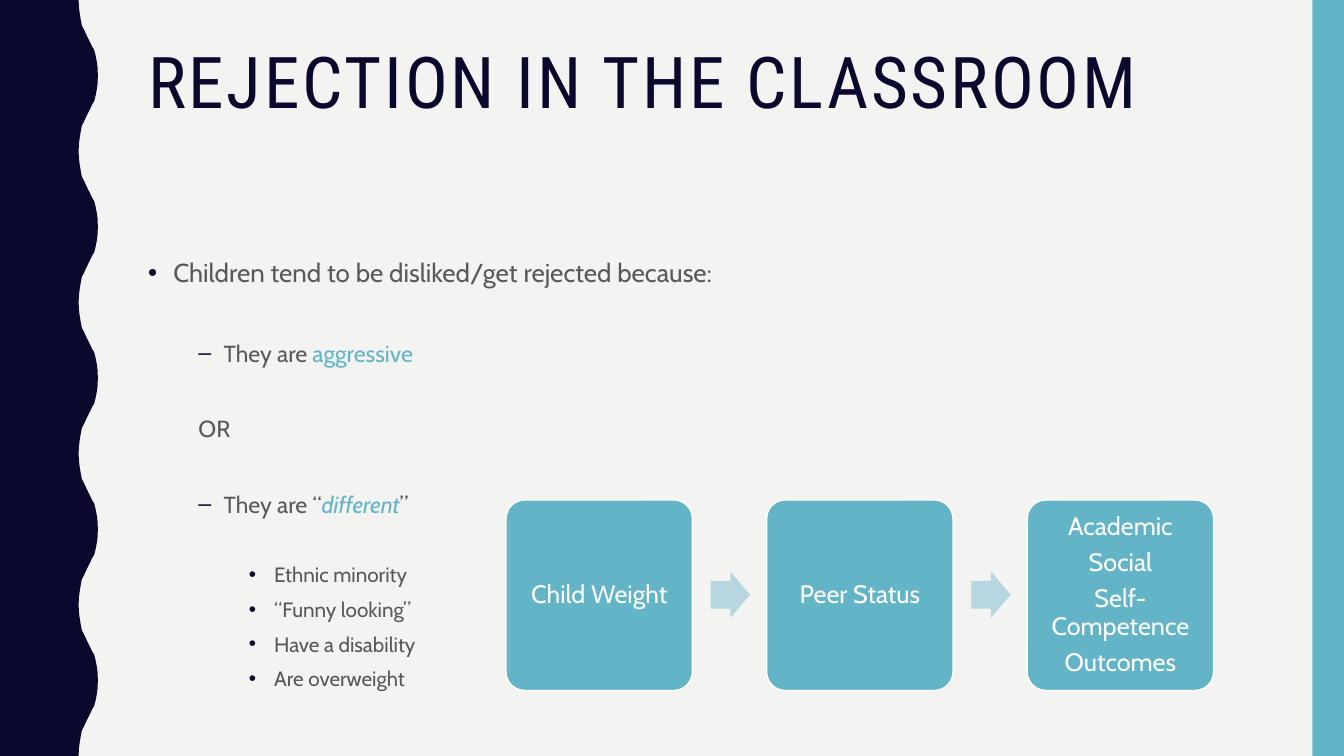
from dataclasses import dataclass
from typing import Optional

from lxml.etree import SubElement
from pptx import Presentation
from pptx.dml.color import RGBColor
from pptx.enum.shapes import MSO_SHAPE as Preset
from pptx.enum.text import MSO_ANCHOR as Anchor, PP_ALIGN as Align
from pptx.oxml.ns import qn
from pptx.util import Inches, Pt

WIDTH, HEIGHT = Inches(13.333), Inches(7.5)
COLOURS = {"paper": "F3F3F2", "navy": "0B082E", "teal": "62B4C6",
           "pale": "B7D6DF", "grey": "595959", "white": "FFFFFF"}
HEADING_FONT, BODY_FONT = "Roboto Condensed", "Cabin"

# Half a wave, from trough to crest: shares of the wave's depth and length
WAVE_DEPTHS = (0, 0.02, 0.06, 0.11, 0.17, 0.26, 0.37, 0.48,
               0.6, 0.71, 0.81, 0.89, 0.95, 0.99, 1)
WAVE_STEPS = (0, 0.05, 0.09, 0.13, 0.17, 0.19, 0.22, 0.25,
              0.28, 0.31, 0.33, 0.37, 0.41, 0.45, 0.5)
WAVES = 5

# Flow of cards, in percent of the slide
FLOW_LEFT, FLOW_STEP = 37.65, 19.39
ARROW_OFFSET = 15.23


@dataclass(frozen=True)
class Span:
    words: str
    accent: bool = False
    italic: bool = False


@dataclass(frozen=True)
class Point:
    spans: tuple[Span, ...]
    size: float
    margin: float
    before: float = 7
    bullet: Optional[str] = None


@dataclass(frozen=True)
class Frame:
    """Place and size in percent of the slide."""
    left: float
    top: float
    width: float
    height: float

    def lengths(self) -> tuple[int, int, int, int]:
        return (across(self.left), down(self.top),
                across(self.width), down(self.height))


POINTS = (
    Point((Span("Children tend to be disliked/get rejected because:"),),
          18.5, 0.25, bullet="•"),
    Point((Span("They are "), Span("aggressive", True)), 16.6, 0.75, 36.3, "–"),
    Point((Span("OR"),), 16.6, 0.5, 34),
    Point((Span("They are “"), Span("different", True, True), Span("”")),
          16.6, 0.75, 34, "–"),
    Point((Span("Ethnic minority"),), 14.8, 1.25, 31.8, "•"),
    Point((Span("“Funny looking”"),), 14.8, 1.25, bullet="•"),
    Point((Span("Have a disability"),), 14.8, 1.25, bullet="•"),
    Point((Span("Are overweight"),), 14.8, 1.25, bullet="•"),
)
CARDS = (("Child Weight",), ("Peer Status",),
         ("Academic", "Social", "Self-Competence", "Outcomes"))


def across(percent: float) -> int:
    return round(WIDTH * percent / 100)


def down(percent: float) -> int:
    return round(HEIGHT * percent / 100)


def colour(name: str) -> RGBColor:
    return RGBColor.from_string(COLOURS[name])


def paint(shape, fill: str, line: Optional[str] = None) -> None:
    shape.shadow.inherit = False
    shape.fill.solid()
    shape.fill.fore_color.rgb = colour(fill)
    if line:
        shape.line.color.rgb = colour(line)
        shape.line.width = Pt(1)
    else:
        shape.line.fill.background()


def set_font(font, name: str, size: float, ink: str) -> None:
    font.name, font.size = name, Pt(size)
    font.color.rgb = colour(ink)


def add_preset(page, preset, frame: Frame, fill: str, line: Optional[str] = None,
               adjustments: tuple[float, ...] = ()):
    shape = page.shapes.add_shape(preset, *frame.lengths())
    for index, value in enumerate(adjustments):
        shape.adjustments[index] = value
    paint(shape, fill, line)
    return shape


def add_wavy_edge(page) -> None:
    trough, depth, length = across(5.85), across(1.43), HEIGHT / WAVES
    half = list(zip(WAVE_DEPTHS, WAVE_STEPS))
    wave = half + [(x, 1 - y) for x, y in reversed(half[1:-1])]
    edge = [(round(trough + depth * x), round(length * (number + y)))
            for number in range(WAVES) for x, y in wave]
    outline = page.shapes.build_freeform(0, 0)
    outline.add_line_segments(edge + [(trough, HEIGHT), (0, HEIGHT)])
    paint(outline.convert_to_shape(), "navy")


def add_text_frame(page, frame: Frame):
    text = page.shapes.add_textbox(*frame.lengths()).text_frame
    text.word_wrap = True
    return text


def add_title(page) -> None:
    para = add_text_frame(page, Frame(10.28, 5.6, 83.48, 21.73)).paragraphs[0]
    para.line_spacing = 0.9
    span = para.add_run()
    span.text = "REJECTION IN THE CLASSROOM"
    set_font(para.font, HEADING_FONT, 51, "navy")
    span.font._element.set("spc", "200")


def set_bullet(para, margin: float, bullet: Optional[str]) -> None:
    properties = para._p.get_or_add_pPr()
    properties.set("marL", str(Inches(margin)))
    properties.set("indent", str(Inches(-0.25 if bullet else 0)))
    if bullet:
        tint = SubElement(properties, qn("a:buClr"))
        SubElement(tint, qn("a:srgbClr")).set("val", COLOURS["navy"])
        SubElement(properties, qn("a:buFont")).set("typeface", "Arial")
        SubElement(properties, qn("a:buChar")).set("char", bullet)
    else:
        SubElement(properties, qn("a:buNone"))


def add_points(page) -> None:
    text = add_text_frame(page, Frame(10.28, 33.33, 83.48, 61.33))
    for index, point in enumerate(POINTS):
        para = text.add_paragraph() if index else text.paragraphs[0]
        para.space_before = Pt(point.before)
        set_bullet(para, point.margin, point.bullet)
        set_font(para.font, BODY_FONT, point.size, "grey")
        for part in point.spans:
            span = para.add_run()
            span.text = part.words
            if part.accent:
                span.font.color.rgb = colour("teal")
            if part.italic:
                span.font.italic = True


def add_card(page, left: float, lines: tuple[str, ...]) -> None:
    box = add_preset(page, Preset.ROUNDED_RECTANGLE,
                     Frame(left, 66.13, 13.87, 25.2), "teal", "white", (0.1,))
    text = box.text_frame
    text.word_wrap = True
    text.vertical_anchor = Anchor.MIDDLE
    text.margin_left = text.margin_right = Inches(0.07)
    text.margin_top = text.margin_bottom = Inches(0.07)
    for index, line in enumerate(lines):
        para = text.add_paragraph() if index else text.paragraphs[0]
        para.text = line
        para.alignment = Align.CENTER
        para.line_spacing, para.space_after = 0.9, Pt(6.3)
        set_font(para.font, BODY_FONT, 18, "white")


def add_flow(page) -> None:
    for index, lines in enumerate(CARDS):
        left = FLOW_LEFT + index * FLOW_STEP
        add_card(page, left, lines)
        if index < len(CARDS) - 1:
            add_preset(page, Preset.RIGHT_ARROW,
                       Frame(left + ARROW_OFFSET, 75.6, 2.93, 6.13),
                       "pale", adjustments=(0.6, 0.5))


def main() -> None:
    deck = Presentation()
    deck.slide_width, deck.slide_height = WIDTH, HEIGHT
    page = deck.slides.add_slide(deck.slide_layouts[6])
    page.background.fill.solid()
    page.background.fill.fore_color.rgb = colour("paper")
    add_wavy_edge(page)
    add_preset(page, Preset.RECTANGLE, Frame(97.65, 0, 2.35, 100), "teal")
    add_title(page)
    add_points(page)
    add_flow(page)
    deck.save("out.pptx")


if __name__ == "__main__":
    main()
